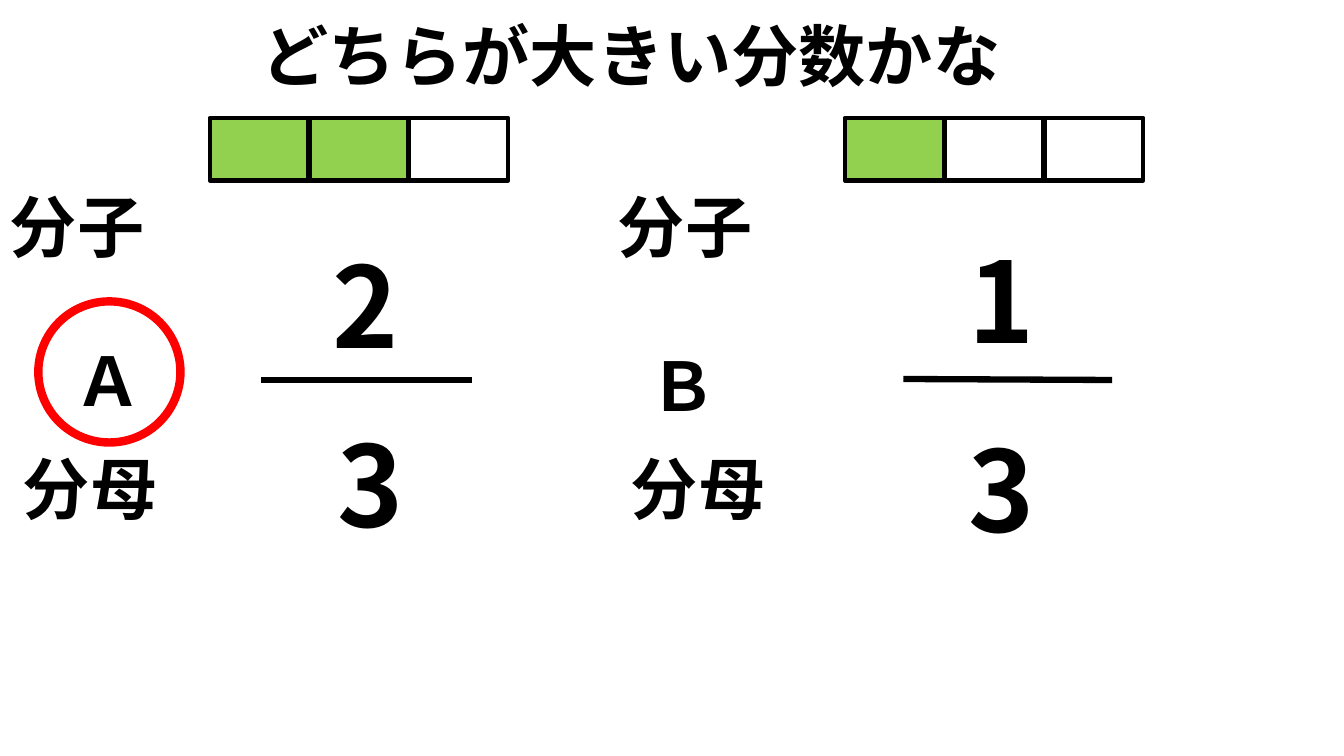
from pptx import Presentation
from pptx.dml.color import RGBColor
from pptx.enum.shapes import MSO_CONNECTOR, MSO_SHAPE
from pptx.enum.text import MSO_ANCHOR, MSO_AUTO_SIZE, PP_ALIGN
from pptx.oxml.ns import qn
from pptx.util import Inches, Pt

# Content: text with left, top, width
TITLE = "どちらが大きい分数かな"
FONT = "Noto Sans CJK JP"
BLACK, WHITE, GREEN, RED = "000000", "FFFFFF", "92D050", "FF0000"
FRACTIONS = [
    {
        "letter": ("Ａ", 0.64, 3.32, 0.88),
        "labels": [("分子", 0, 1.79, 1.64), ("分母", 0.13, 4.39, 1.64)],
        "numbers": [("2", 3.2, 2.3, 0.88), ("3", 3.25, 4.07, 0.89)],
        "rule": (2.59, 3.77, 4.68, 3.77),
        "bar_left": 2.08,
        "cells": [GREEN, GREEN, WHITE],
    },
    {
        "letter": ("Ｂ", 6.34, 3.37, 0.88),
        "labels": [("分子", 6.03, 1.79, 1.64), ("分母", 6.16, 4.39, 1.64)],
        "numbers": [("1", 9.51, 2.25, 0.89), ("3", 9.51, 4.12, 0.89)],
        "rule": (8.96, 3.76, 11.03, 3.77),
        "bar_left": 8.38,
        "cells": [GREEN, WHITE, WHITE],
    },
]
ANSWER_RING = (0.38, 2.99, 1.41, 1.4)
BAR_TOP, CELL_WIDTH, CELL_HEIGHT, CELL_STEP = 1.17, 0.98, 0.62, 0.99
HEIGHTS = {48: 0.91, 80: 1.45}  # box height for each text size


def color(value):
    return RGBColor.from_string(value)


def set_text(box, text, size, wrap=True):
    frame = box.text_frame
    frame.text = text
    frame.word_wrap = wrap
    frame.auto_size = MSO_AUTO_SIZE.SHAPE_TO_FIT_TEXT
    frame.vertical_anchor = MSO_ANCHOR.TOP
    paragraph = frame.paragraphs[0]
    paragraph.alignment = PP_ALIGN.LEFT
    font = paragraph.font
    font.name, font.size, font.bold = FONT, Pt(size), True
    font.color.rgb = color(BLACK)
    # East Asian typeface
    run_properties = paragraph.runs[0].font._element
    east_asian = run_properties.makeelement(qn("a:ea"), {"typeface": FONT})
    run_properties.append(east_asian)


def add_text(text, left, top, width, size=48, wrap=True):
    box = slide.shapes.add_textbox(
        Inches(left), Inches(top), Inches(width), Inches(HEIGHTS[size]))
    set_text(box, text, size, wrap)


def add_line(x1, y1, x2, y2, width):
    line = slide.shapes.add_connector(
        MSO_CONNECTOR.STRAIGHT, Inches(x1), Inches(y1), Inches(x2), Inches(y2))
    line.line.color.rgb = color(BLACK)
    line.line.width = Pt(width)
    properties = line._element.spPr
    properties.append(properties.makeelement(qn("a:effectLst"), {}))


def add_outlined(kind, left, top, width, height, outline, weight, fill=None):
    shape = slide.shapes.add_shape(
        kind, Inches(left), Inches(top), Inches(width), Inches(height))
    shape.shadow.inherit = False
    shape.line.color.rgb = color(outline)
    shape.line.width = Pt(weight)
    if fill:
        shape.fill.solid()
        shape.fill.fore_color.rgb = color(fill)
    else:
        shape.fill.background()


presentation = Presentation()
presentation.slide_width, presentation.slide_height = Inches(13.33), Inches(7.5)
slide = presentation.slides.add_slide(presentation.slide_layouts[5])

# Title
title = slide.shapes.title
title.left, title.top = Inches(2.49), Inches(0.09)
title.width, title.height = Inches(8.79), Inches(HEIGHTS[48])
set_text(title, TITLE, 48)

for fraction in FRACTIONS:
    # Letter, labels and the fraction itself
    add_text(*fraction["letter"], wrap=False)
    for label in fraction["labels"]:
        add_text(*label)
    for number in fraction["numbers"]:
        add_text(*number, size=80)
    add_line(*fraction["rule"], 4.5)

    # Bar divided into thirds
    bar_left = fraction["bar_left"]
    add_line(bar_left, 1.16, bar_left, 1.8, 3)
    for index, fill in enumerate(fraction["cells"]):
        add_outlined(MSO_SHAPE.RECTANGLE, bar_left + index * CELL_STEP, BAR_TOP,
                     CELL_WIDTH, CELL_HEIGHT, BLACK, 3, fill)

# Ring around the larger fraction's letter
add_outlined(MSO_SHAPE.OVAL, *ANSWER_RING, RED, 6)

presentation.save("out.pptx")
